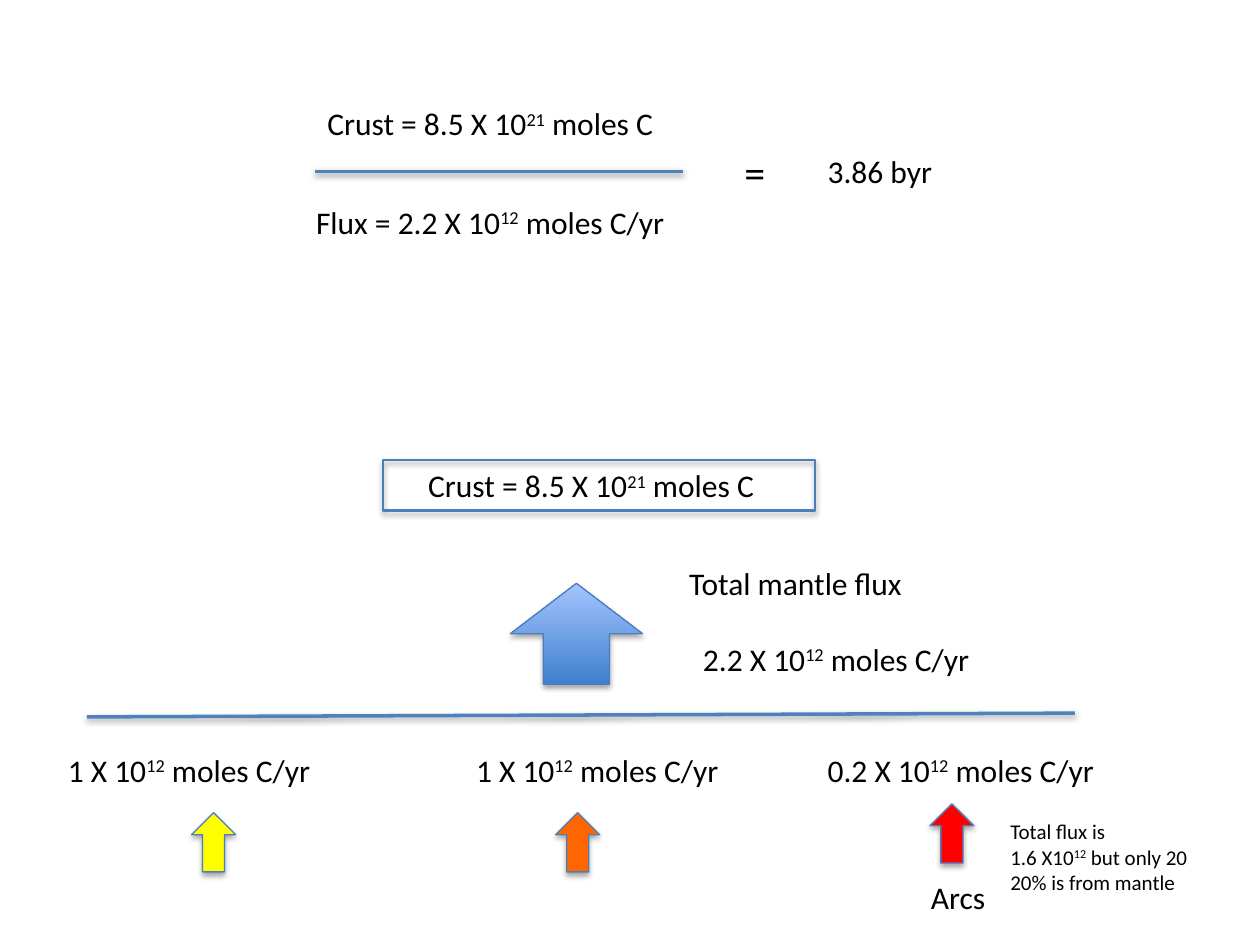
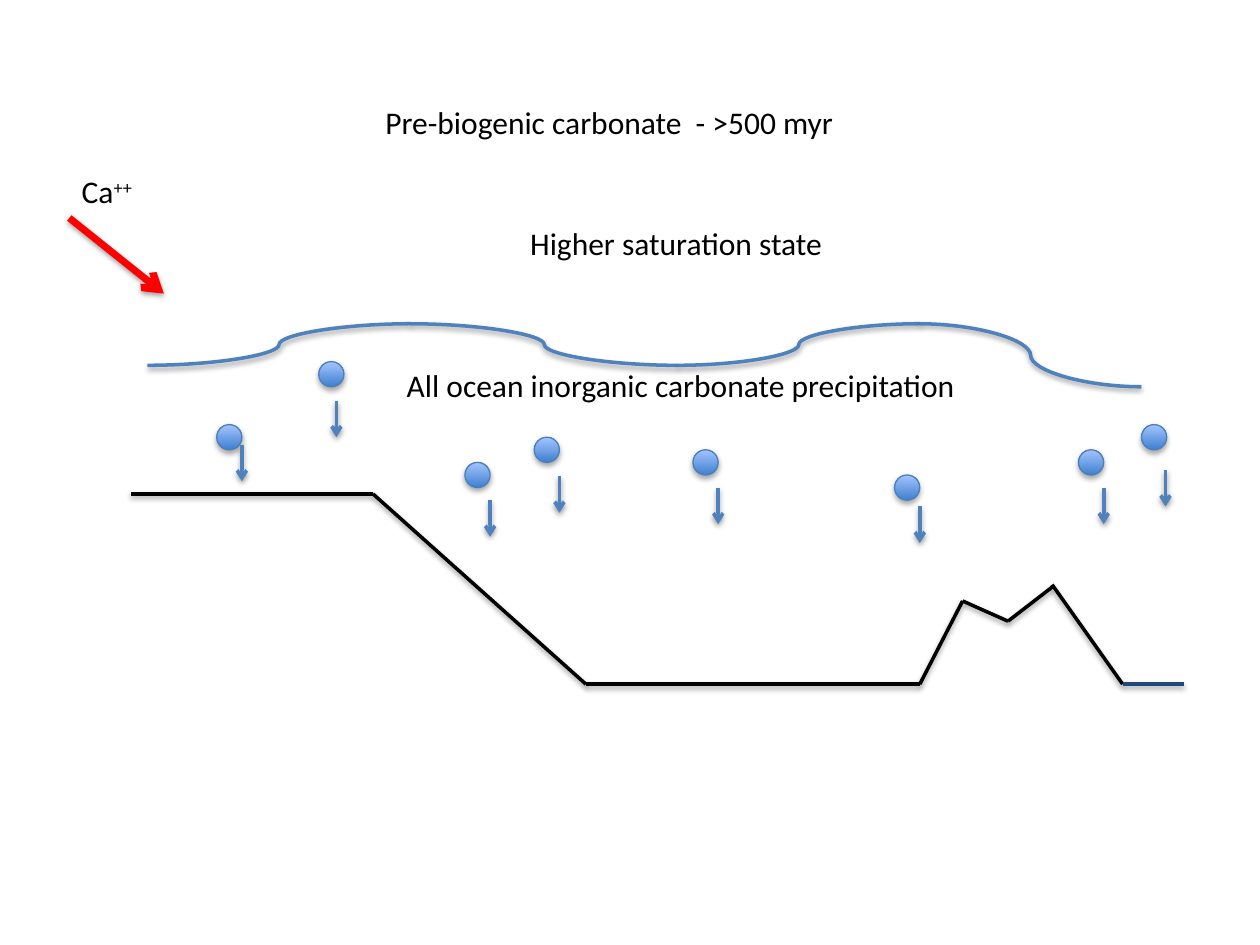
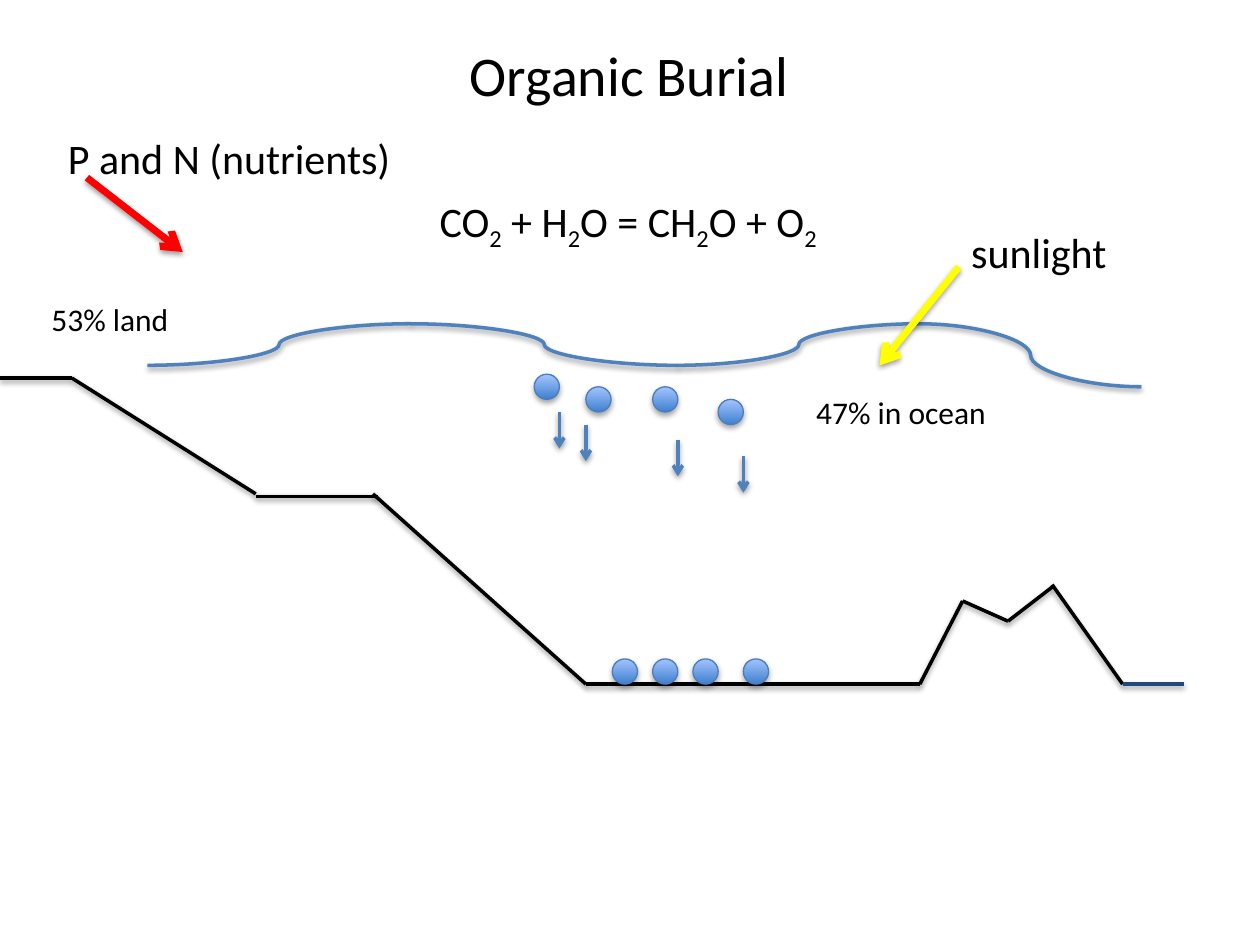
from dataclasses import dataclass
from itertools import pairwise

from lxml.etree import SubElement
from pptx import Presentation
from pptx.dml.color import RGBColor
from pptx.enum.shapes import MSO_CONNECTOR, MSO_SHAPE
from pptx.enum.text import MSO_AUTO_SIZE
from pptx.oxml.ns import qn
from pptx.util import Emu, Pt

EMU_PER_PX = 9144  # 100 px to the inch


def px(n):
    return Emu(n * EMU_PER_PX)


# Colours, type sizes and line widths
@dataclass(frozen=True)
class Theme:
    font: str = "Calibri"
    black: str = "000000"
    blue: str = "4F81BD"
    navy: str = "1F497D"
    outline: str = "4B7EBC"
    red: str = "FF0000"
    orange: str = "FF6600"
    yellow: str = "FFFF00"
    gradient: tuple = ("3F80CE", "A4C4FF")
    title: int = 32
    large: int = 24
    body: int = 18
    note: int = 12
    thin: float = 0.75
    frame: float = 1.5
    rule: int = 2
    bold_arrow: int = 4
    superscript: int = 30000
    subscript: int = -25000


T = Theme()


def rgb(color):
    return RGBColor.from_string(color)


def fill_paragraph(p, text, *, size, color, base):
    """Pieces between bars are raised or lowered by base."""
    for i, piece in enumerate(text.split("|")):
        if not piece:
            continue
        r = p.add_run()
        r.text = piece
        r.font.name, r.font.size = T.font, Pt(size)
        r.font.color.rgb = rgb(color)
        if i % 2:
            r.font._element.set("baseline", str(base))


def cast_shadow(effects, distance, alpha):
    shadow = SubElement(effects, qn("a:outerShdw"), blurRad="40000",
                        dist=str(distance), dir="5400000", rotWithShape="0")
    color = SubElement(shadow, qn("a:srgbClr"), val=T.black)
    SubElement(color, qn("a:alpha"), val=str(alpha))


class Deck:
    def __init__(self):
        self.prs = Presentation()
        self.prs.slide_width, self.prs.slide_height = px(1000), px(750)
        self.s = None

    def slide(self):
        self.s = self.prs.slides.add_slide(self.prs.slide_layouts[6])

    def text(self, x, y, w, h, text, *, size=T.body, color=T.black,
             base=T.superscript, wrap=False):
        tf = self.s.shapes.add_textbox(px(x), px(y), px(w), px(h)).text_frame
        tf.word_wrap = wrap
        tf.auto_size = MSO_AUTO_SIZE.SHAPE_TO_FIT_TEXT
        for i, row in enumerate(text.split("\n")):
            p = tf.add_paragraph() if i else tf.paragraphs[0]
            fill_paragraph(p, row, size=size, color=color, base=base)

    def shape(self, kind, x, y, w, h, *, fill=None, width=T.thin):
        sp = self.s.shapes.add_shape(kind, px(x), px(y), px(w), px(h))
        if fill is None:
            sp.fill.background()
        elif isinstance(fill, tuple):
            sp.fill.gradient()
            sp.fill.gradient_angle = 90
            for stop, color, place in zip(sp.fill.gradient_stops, fill, (0, 1)):
                stop.color.rgb, stop.position = rgb(color), place
        else:
            sp.fill.solid()
            sp.fill.fore_color.rgb = rgb(fill)
        sp.line.color.rgb, sp.line.width = rgb(T.outline), Pt(width)
        sp.shadow.inherit = False
        cast_shadow(sp._element.spPr.find(qn("a:effectLst")), 23000, 35000)

    def line(self, start, end, *, color=T.blue, width=T.rule, arrow=False,
             kind=MSO_CONNECTOR.STRAIGHT):
        c = self.s.shapes.add_connector(kind, *map(px, (*start, *end)))
        c.line.color.rgb, c.line.width = rgb(color), Pt(width)
        spPr = c._element.spPr
        if arrow:
            SubElement(spPr.find(qn("a:ln")), qn("a:tailEnd"), type="arrow")
        cast_shadow(SubElement(spPr, qn("a:effectLst")), 20000, 38000)

    def chain(self, points, **style):
        for start, end in pairwise(points):
            self.line(start, end, **style)

    def grains(self, places):
        for x, y in places:
            self.shape(MSO_SHAPE.OVAL, x, y, 20, 20, fill=T.gradient)

    def falls(self, places):
        for x, y in places:
            self.line((x, y), (x, y + 29), arrow=True)

    # Sea surface and sea floor shared by the ocean sections
    def ocean(self):
        self.chain([(117, 290), (326, 257), (538, 290), (730, 257), (906, 307)],
                   kind=MSO_CONNECTOR.CURVE)
        self.chain([(296, 392), (465, 543), (730, 543), (764, 477), (800, 493),
                    (835, 466)], color=T.black)
        self.line((835, 464), (891, 543), color=T.black)
        self.line((891, 543), (940, 543), color=T.navy)


def carbon_flux(d):
    d.slide()
    # Residence time
    d.text(250, 78, 284, 40, "Crust = 8.5 X 10|21| moles C")
    d.line((250, 136), (542, 136))
    d.text(241, 156, 301, 40, "Flux = 2.2 X 10|12| moles C/yr")
    d.text(581, 111, 37, 50, "=", size=T.large)
    d.text(647, 116, 104, 40, "3.86 byr")

    # Crust reservoir and total flux
    d.line((69, 569), (853, 566))
    d.text(330, 365, 292, 40, "Crust = 8.5 X 10|21| moles C")
    d.shape(MSO_SHAPE.RECTANGLE, 304, 365, 343, 40, width=T.frame)
    d.shape(MSO_SHAPE.UP_ARROW, 405, 463, 105, 80, fill=T.gradient)
    d.text(537, 443, 191, 40, "Total mantle flux")
    d.text(548, 503, 245, 40, "2.2 X 10|12| moles C/yr")

    # Mantle sources
    for amount, text_x, w, arrow_x, arrow_y, color in (
            ("1", 44, 217, 152, 645, T.yellow),
            ("1", 368, 217, 441, 645, T.orange),
            ("0.2", 647, 236, 738, 638, T.red)):
        d.text(text_x, 591, w, 40, f"{amount} X 10|12| moles C/yr")
        d.shape(MSO_SHAPE.UP_ARROW, arrow_x, arrow_y, 35, 47, fill=color)
    d.text(729, 692, 64, 40, "Arcs")
    d.text(792, 645, 169, 71,
           "Total flux is\n1.6 X10|12| but only 20\n20% is from mantle",
           size=T.note)


def pre_biogenic(d):
    d.slide()
    d.ocean()
    d.line((104, 392), (296, 392), color=T.black)
    d.text(313, 286, 474, 40, "All ocean inorganic carbonate precipitation",
           wrap=True)
    d.text(296, 77, 379, 40, "Pre-biogenic carbonate  - >500 myr")
    d.text(411, 173, 254, 40, "Higher saturation state")

    # Carbonate settling
    d.grains([(906, 337), (253, 287), (369, 367), (856, 357), (710, 377),
              (550, 357), (424, 347), (172, 337)])
    d.falls([(925, 373), (876, 387), (192, 353), (730, 402), (570, 387),
             (444, 378), (389, 397), (267, 318)])

    # Calcium input
    d.line((55, 173), (130, 233), color=T.red, width=T.bold_arrow, arrow=True)
    d.text(55, 132, 63, 40, "Ca|++|")


def organic_burial(d):
    d.slide()
    d.text(363, 27, 275, 64, "Organic Burial", size=T.title)
    d.text(339, 150, 334, 50, "CO|2| + H|2|O = CH|2|O + O|2|",
           size=T.large, base=T.subscript)

    # Land, shelf and ocean
    d.ocean()
    d.chain([(0, 300), (57, 300), (203, 392)], color=T.black)
    d.line((203, 394), (300, 394), color=T.black)
    d.text(31, 233, 114, 40, "53% land")
    d.text(638, 307, 156, 40, "47% in ocean")

    # Organic matter, sinking and buried
    d.grains([(570, 317), (518, 307), (465, 307), (424, 297)])
    d.grains([(x, 523) for x in (486, 518, 550, 590)])
    d.falls([(444, 327), (590, 362), (538, 349), (465, 337)])

    # Nutrients and sunlight
    d.line((69, 141), (145, 200), color=T.red, width=T.bold_arrow, arrow=True)
    d.text(44, 100, 279, 50, "P and N (nutrients)", size=T.large)
    d.line((761, 212), (698, 290), color=T.yellow, width=T.bold_arrow, arrow=True)
    d.text(761, 175, 129, 50, "sunlight", size=T.large)


def main():
    d = Deck()
    for build in (carbon_flux, pre_biogenic, organic_burial):
        build(d)
    d.prs.save("out.pptx")


if __name__ == "__main__":
    main()
